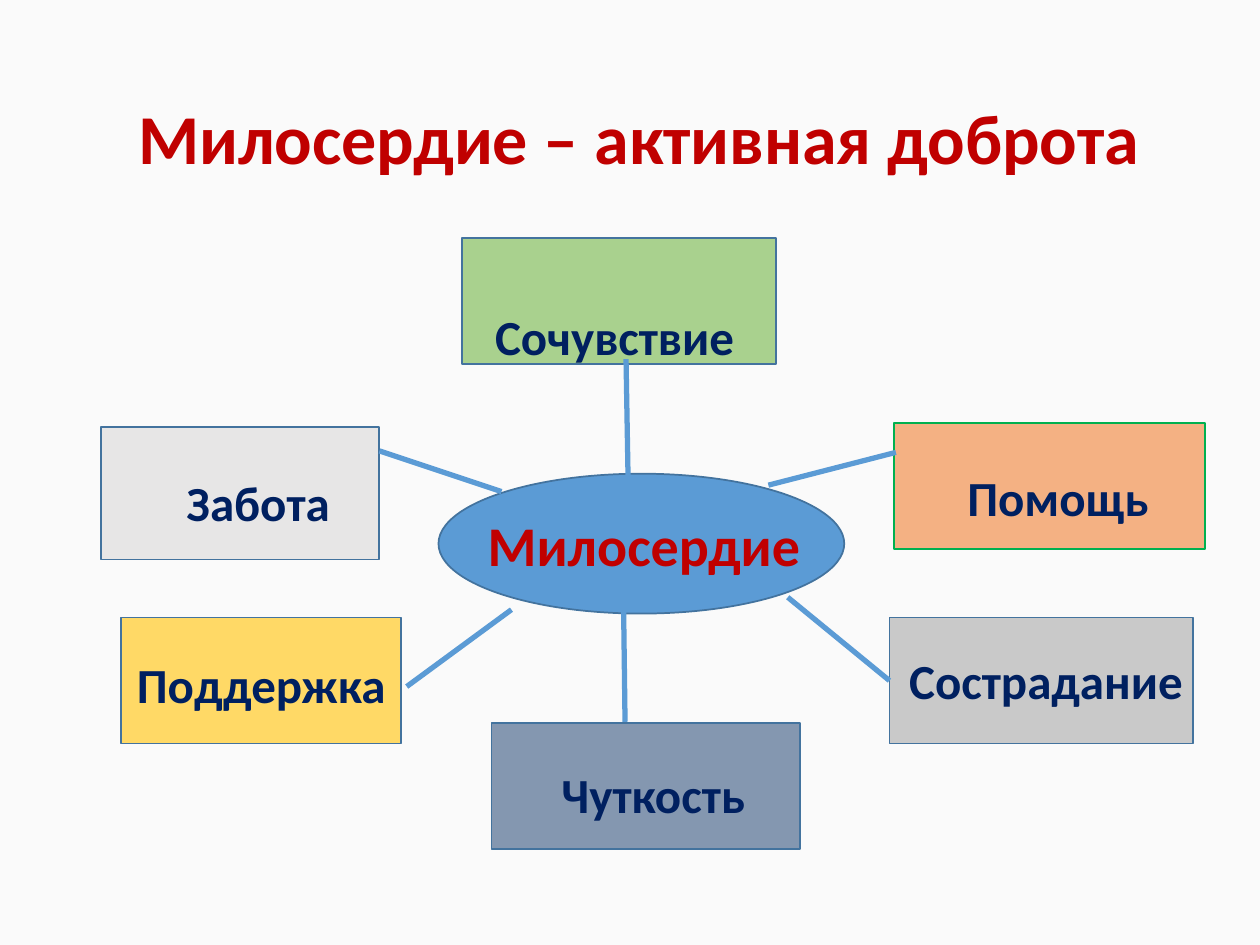
from dataclasses import dataclass

from lxml.etree import SubElement
from pptx import Presentation
from pptx.dml.color import RGBColor
from pptx.enum.shapes import MSO_CONNECTOR as Connector, MSO_SHAPE as Shape
from pptx.enum.text import MSO_ANCHOR as Anchor, MSO_AUTO_SIZE as AutoSize, PP_ALIGN as Align
from pptx.oxml.ns import qn
from pptx.util import Cm, Pt


@dataclass(frozen=True)
class Theme:
    font: str = "Calibri"
    background: str = "FAFAFA"
    accent: str = "C00000"
    label: str = "002060"
    center: str = "5B9BD5"
    outline: str = "43739E"
    help_outline: str = "00B050"
    title_size: int = 40
    center_size: int = 32
    label_size: int = 28


THEME = Theme()


@dataclass(frozen=True)
class Quality:
    """One box around the centre; all lengths in centimetres."""
    word: str
    fill: str
    box: tuple      # left, top, width, height
    label: tuple    # left, top, width
    spoke: tuple    # x, y at the box, then x, y at the centre
    outline: str = THEME.outline


QUALITIES = [
    Quality("Забота", "E7E6E6", (2.03, 8.61, 5.61, 2.67), (3.51, 9.4, 4.24),
            (7.65, 9.09, 10.11, 9.91)),
    Quality("Помощь", "F4B183", (18.03, 8.53, 6.27, 2.54), (19.25, 9.3, 4.22),
            (18.06, 9.12, 15.49, 9.78), THEME.help_outline),
    Quality("Поддержка", "FFD966", (2.44, 12.45, 5.64, 2.54), (2.51, 13.06, 5.6),
            (8.2, 13.84, 10.31, 12.29)),
    Quality("Чуткость", "8497B0", (9.91, 14.58, 6.22, 2.54), (11.07, 15.29, 5),
            (12.6, 14.55, 12.57, 12.17)),
    Quality("Сочувствие", "A9D18E", (9.32, 4.8, 6.32, 2.54), (9.73, 6.05, 5.9),
            (12.62, 7.24, 12.67, 10.16)),
    Quality("Сострадание", "C9C9C9", (17.93, 12.45, 6.12, 2.54), (18.08, 12.98, 6.93),
            (17.93, 13.72, 15.88, 12.04)),
]


def rgb(code):
    return RGBColor.from_string(code)


def write(frame, text, size, color):
    frame.text = text
    frame.word_wrap = True
    font = frame.paragraphs[0].runs[0].font
    font.name, font.size, font.bold = THEME.font, Pt(size), True
    font.color.rgb = rgb(color)


def add_title(slide, text):
    title = slide.shapes.title
    title.left, title.top, title.width, title.height = map(Cm, (0, 1.02, 25.76, 3.68))
    write(title.text_frame, text, THEME.title_size, THEME.accent)
    title.text_frame.vertical_anchor = Anchor.MIDDLE
    paragraph = title.text_frame.paragraphs[0]
    paragraph.alignment, paragraph.line_spacing = Align.CENTER, 0.9


def add_figure(slide, kind, place, fill, outline):
    figure = slide.shapes.add_shape(kind, *map(Cm, place))
    figure.shadow.inherit = False
    figure.fill.solid()
    figure.fill.fore_color.rgb = rgb(fill)
    figure.line.color.rgb = rgb(outline)
    figure.line.width = Pt(1)


def add_label(slide, text, place, size, color):
    frame = slide.shapes.add_textbox(*map(Cm, place)).text_frame
    write(frame, text, size, color)
    frame.auto_size = AutoSize.SHAPE_TO_FIT_TEXT


def add_spoke(slide, ends):
    spoke = slide.shapes.add_connector(Connector.STRAIGHT, *map(Cm, ends))
    spoke.line.color.rgb = rgb(THEME.center)
    spoke.line.width = Pt(3)
    SubElement(spoke._element.spPr, qn("a:effectLst"))


def main():
    deck = Presentation()
    deck.slide_width, deck.slide_height = Cm(25.4), Cm(19.05)
    slide = deck.slides.add_slide(deck.slide_layouts[5])
    slide.background.fill.solid()
    slide.background.fill.fore_color.rgb = rgb(THEME.background)
    add_title(slide, "Милосердие – активная доброта")

    # Central idea
    add_figure(slide, Shape.OVAL, (8.84, 9.55, 8.18, 2.82), THEME.center, THEME.outline)
    add_label(slide, "Милосердие", (9.58, 10.16, 6.88, 1.63), THEME.center_size, THEME.accent)

    # Qualities around it, with the spokes on top
    for quality in QUALITIES:
        add_figure(slide, Shape.RECTANGLE, quality.box, quality.fill, quality.outline)
        add_label(slide, quality.word, (*quality.label, 1.45), THEME.label_size, THEME.label)
    for quality in QUALITIES:
        add_spoke(slide, quality.spoke)

    deck.save("out.pptx")


if __name__ == "__main__":
    main()
